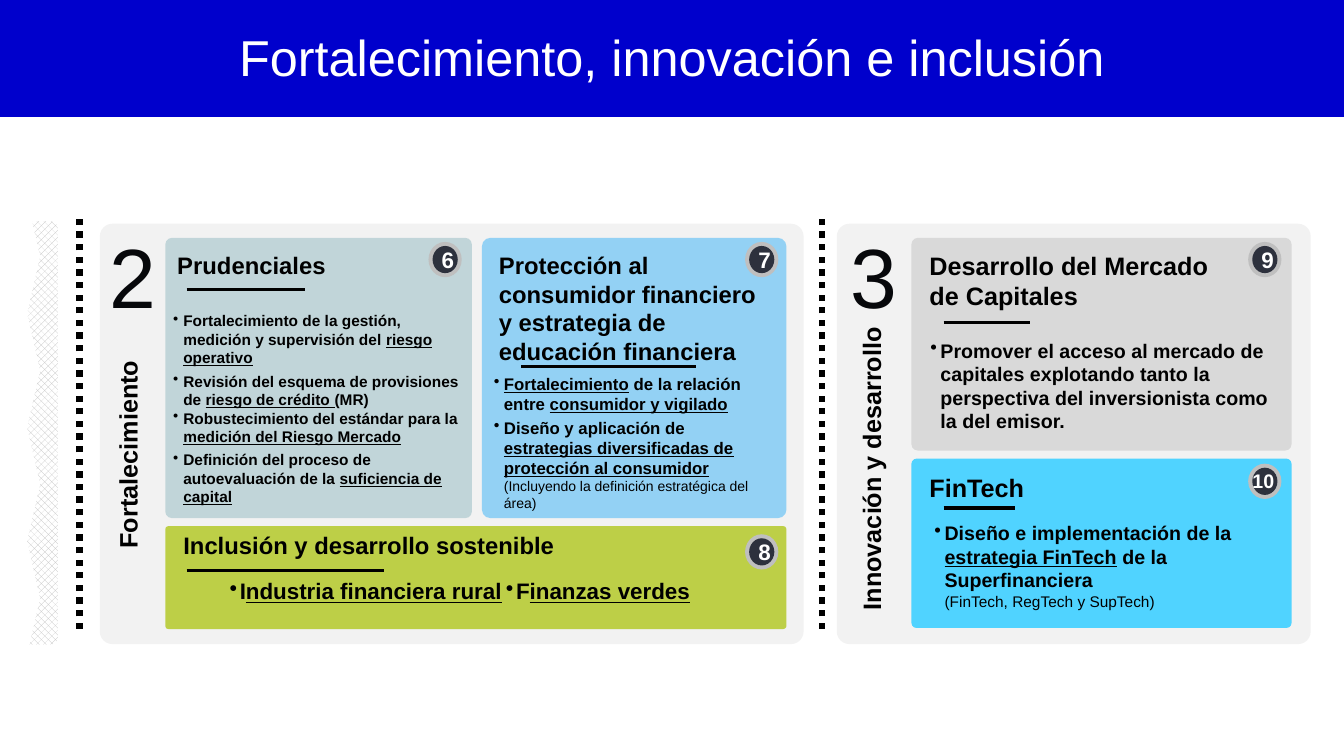
from lxml import etree
from pptx import Presentation
from pptx import util as u
from pptx.dml import color
from pptx.enum import dml, shapes, text
from pptx.oxml import ns

SCALE = 9144
FONT = "Arial"
SHAPE = shapes.MSO_SHAPE
CENTER = text.PP_ALIGN.CENTER
MIDDLE = text.MSO_ANCHOR.MIDDLE

PANELS = [
    ((830, 222, 470, 417), 0.03, "F2F2F2", 100),
    ((99, 222, 698, 417), 0.03, "F2F2F2", 100),
    ((164, 236, 304, 278), 0.023, "006576", 20),
    ((478, 236, 302, 278), 0.03, "45B7F7", 55),
    ((164, 522, 616, 102), 0.03, "B8CC35", 90),
    ((904, 236, 377, 211), 0.03, "D9D9D9", 100),
    ((904, 455, 377, 168), 0.03, "50D3FF", 100),
]
SIDE_LABELS = [
    ((-12, 427, 285, 48), "Fortalecimiento"),
    ((683, 441, 370, 48), "Innovación y desarrollo"),
]
BIG_NUMBERS = [(68, "2"), (803, "3")]
HEADINGS = [
    ((166, 244, 304, 67), 17, ["Prudenciales"]),
    ((485, 244, 310, 79), 17, ["Protección al", "consumidor financiero",
                               "y estrategia de", "educación financiera"]),
    ((172, 522, 499, 79), 17, ["Inclusión y desarrollo sostenible"]),
    ((912, 243, 408, 79), 18, ["Desarrollo del Mercado", "de Capitales"]),
    ((912, 464, 408, 79), 18, ["FinTech"]),
]
RULES = [(185, 303, 287), (517, 690, 364), (185, 381, 566), (936, 1022, 320), (936, 1007, 504)]
BADGES = [(425, 240, "6"), (739, 240, "7"), (739, 530, "8"), (1238, 240, "9"), (1238, 460, "10")]
LISTS = [
    ((162, 304, 307, 83), 11, 11, [
        ("Fortalecimiento de la gestión, medición y supervisión del _riesgo operativo_", 0),
        ("Revisión del esquema de provisiones de _riesgo de crédito _(MR)", 3.5),
        ("Robustecimiento del estándar para la _medición del Riesgo Mercado_", 0),
        ("Definición del proceso de autoevaluación de la _suficiencia de capital_", 3.5),
    ]),
    ((480, 366, 300, 83), 12, 10, [
        ("_Fortalecimiento_ de la relación entre _consumidor y vigilado_", 0),
        ("Diseño y aplicación de _estrategias diversificadas de protección al consumidor_ "
         "~(Incluyendo la definición estratégica del área)", 2.3),
    ]),
    ((913, 331, 364, 83), 14, 11, [
        ("Promover el acceso al mercado de capitales explotando tanto la perspectiva "
         "del inversionista como la del emisor.", 0),
    ]),
    ((218, 568, 594, 36), 16, 11, [("I_ndustria financiera rural_", 0)]),
    ((492, 568, 594, 36), 16, 11, [("F_inanzas verdes_", 0)]),
    ((917, 512, 364, 83), 14, 11, [
        ("Diseño e implementación de la _estrategia FinTech_ de la Superfinanciera", 0),
        ("~(FinTech, RegTech y SupTech)", 0),
    ]),
]


def px(value):
    return u.Emu(value * SCALE)


def rgb(value):
    return color.RGBColor.from_string(value)


def apply(target, **values):
    for name, value in values.items():
        setattr(target, name, value)


def add_run(paragraph, words, size, hue="000000", **values):
    run = paragraph.add_run()
    run.text = words
    apply(run.font, name=FONT, size=u.Pt(size), **values)
    run.font.color.rgb = rgb(hue)


def add_panel(slide, kind, box, fill, alpha=100, outline=None, rotation=0, adjustment=None):
    shape = slide.shapes.add_shape(kind, *map(px, box))
    shape.shadow.inherit = False
    shape.rotation = rotation
    if adjustment is not None:
        shape.adjustments[0] = adjustment
    if fill:
        shape.fill.solid()
        shape.fill.fore_color.rgb = rgb(fill)
    else:
        shape.fill.background()
    if alpha < 100:
        hue = shape.fill._xPr.find(".//" + ns.qn("a:srgbClr"))
        etree.SubElement(hue, ns.qn("a:alpha"), val=str(alpha * 1000))
    if outline:
        shape.line.color.rgb = rgb(outline)
        shape.line.width = u.Pt(1)
    else:
        shape.line.fill.background()
    return shape


def add_line(slide, start, end, width, dash=None):
    line = slide.shapes.add_connector(shapes.MSO_CONNECTOR.STRAIGHT, *map(px, start + end))
    line.line.color.rgb = rgb("000000")
    line.line.width = u.Pt(width)
    if dash:
        line.line.dash_style = dash
    etree.SubElement(line._element.spPr, ns.qn("a:effectLst"))


def add_text(slide, box, rows, size, hue="000000", bold=True, align=None, anchor=None, rotation=0):
    shape = slide.shapes.add_textbox(*map(px, box))
    shape.rotation = rotation
    frame = shape.text_frame
    apply(frame, word_wrap=True, vertical_anchor=anchor)
    for index, row in enumerate(rows):
        paragraph = frame.add_paragraph() if index else frame.paragraphs[0]
        paragraph.alignment = align
        add_run(paragraph, row, size, hue, bold=bold)


def add_bullets(slide, box, size, note_size, items):
    frame = slide.shapes.add_textbox(*map(px, box)).text_frame
    frame.word_wrap = True
    for index, (markup, gap) in enumerate(items):
        paragraph = frame.add_paragraph() if index else frame.paragraphs[0]
        main_text, _, note = markup.partition("~")
        properties = paragraph._p.get_or_add_pPr()
        properties.set("marL", str(px(10)))
        properties.set("indent", str(px(-10 if main_text else 0)))
        if main_text:
            etree.SubElement(properties, ns.qn("a:buChar"), char="•")
        if gap:
            paragraph.space_before = u.Pt(gap)
        for part, words in enumerate(main_text.split("_")):
            if words:
                add_run(paragraph, words, size, bold=True, underline=part % 2 == 1)
        if note:
            add_run(paragraph, note, note_size, bold=False)


def add_badge(slide, left, top, number):
    add_panel(slide, SHAPE.OVAL, (left, top, 33, 35), "BFBFBF")
    add_panel(slide, SHAPE.OVAL, (left + 4, top + 4, 25, 27), "2D313D")
    wide = len(number) > 1
    box = (left - 7, top + 2, 46, 29) if wide else (left + 4, top + 3, 25, 29)
    label = add_panel(slide, SHAPE.PENTAGON, box, None, adjustment=0.124)
    frame = label.text_frame
    apply(frame, margin_left=px(0 if wide else 7), margin_right=0, margin_top=0,
          margin_bottom=0, vertical_anchor=MIDDLE, word_wrap=True)
    paragraph = frame.paragraphs[0]
    paragraph.alignment = CENTER
    add_run(paragraph, number, 14 if wide else 16, "FFFFFF", bold=True)


def add_torn_strip(slide):
    strip = add_panel(slide, SHAPE.ROUNDED_RECTANGLE, (-176, 406, 420, 47), "FFFFFF",
                      rotation=270, adjustment=0.159)
    strip.fill.patterned()
    strip.fill.pattern = dml.MSO_PATTERN.PERCENT_50
    strip.fill.fore_color.rgb = rgb("BFBFBF")
    strip.fill.back_color.rgb = rgb("FFFFFF")
    for index in range(4):
        add_panel(slide, SHAPE.ISOSCELES_TRIANGLE, (-24, 248 + 113 * index, 113, 13),
                  "FFFFFF", outline="FFFFFF", rotation=90)
    add_panel(slide, SHAPE.RECTANGLE, (-198, 419, 425, 23), "FFFFFF",
              outline="FFFFFF", rotation=270)


def add_title(slide, words):
    banner = add_panel(slide, SHAPE.RECTANGLE, (0, 0, 1333, 116), "0000CC")
    slide.shapes._spTree.insert(2, banner._element)
    title = slide.shapes.title
    apply(title, left=px(0), top=px(12), width=px(1333), height=px(87))
    title.text_frame.vertical_anchor = MIDDLE
    paragraph = title.text_frame.paragraphs[0]
    paragraph.alignment = CENTER
    add_run(paragraph, words, 36, "FFFFFF")


def main():
    presentation = Presentation()
    apply(presentation, slide_width=px(1333), slide_height=px(750))
    slide = presentation.slides.add_slide(presentation.slide_layouts[5])
    add_title(slide, "Fortalecimiento, innovación e inclusión")
    for box, adjustment, fill, alpha in PANELS:
        add_panel(slide, SHAPE.ROUNDED_RECTANGLE, box, fill, alpha, adjustment=adjustment)
    for box, label in SIDE_LABELS:
        add_text(slide, box, [label], 18, align=CENTER, rotation=270)
    for left, number in BIG_NUMBERS:
        add_text(slide, (left, 228, 127, 89), [number], 60, "07080B", False, CENTER, MIDDLE)
    for box, size, rows in HEADINGS:
        add_text(slide, box, rows, size)
    for start, end, top in RULES:
        add_line(slide, (start, top), (end, top), 2.25)
    for box, size, note_size, items in LISTS:
        add_bullets(slide, box, size, note_size, items)
    for left, top, number in BADGES:
        add_badge(slide, left, top, number)
    add_torn_strip(slide)
    for left in (79, 815):
        add_line(slide, (left, 624), (left, 214), 4.5, dml.MSO_LINE.ROUND_DOT)
    presentation.save("out.pptx")


if __name__ == "__main__":
    main()
